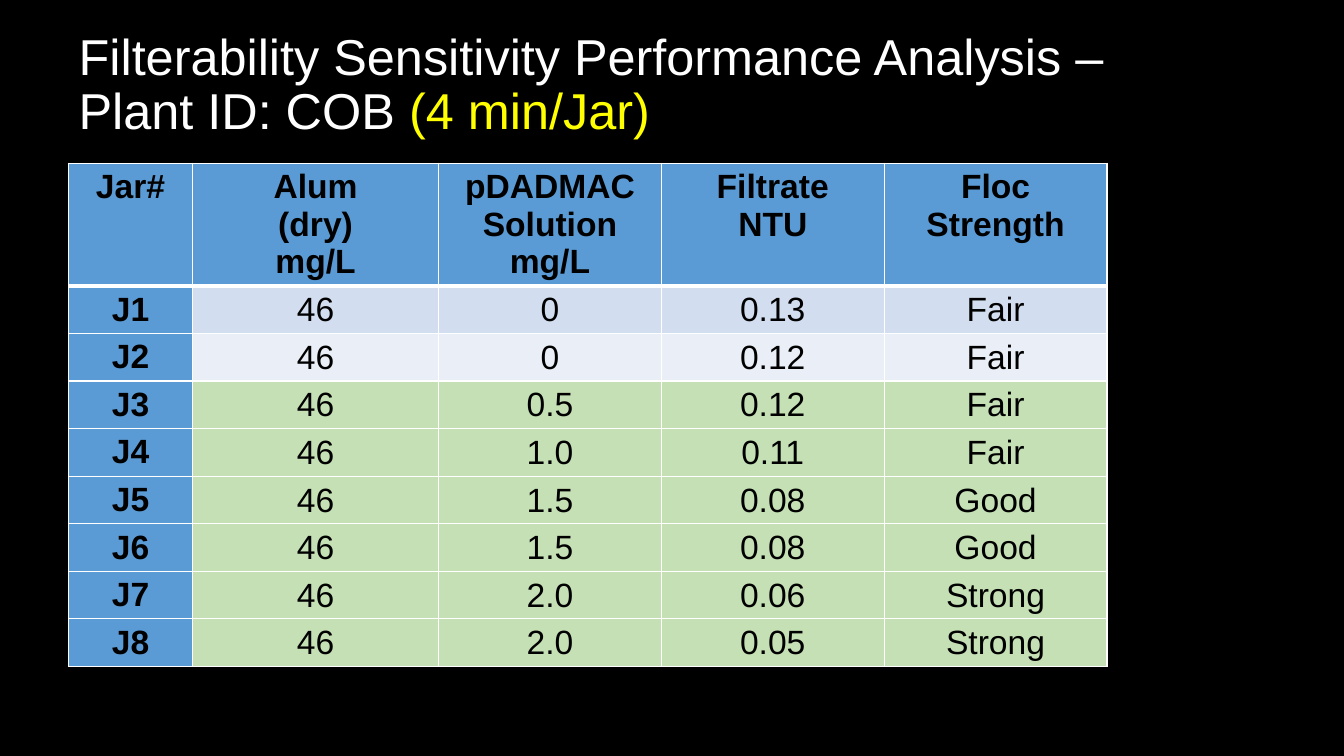
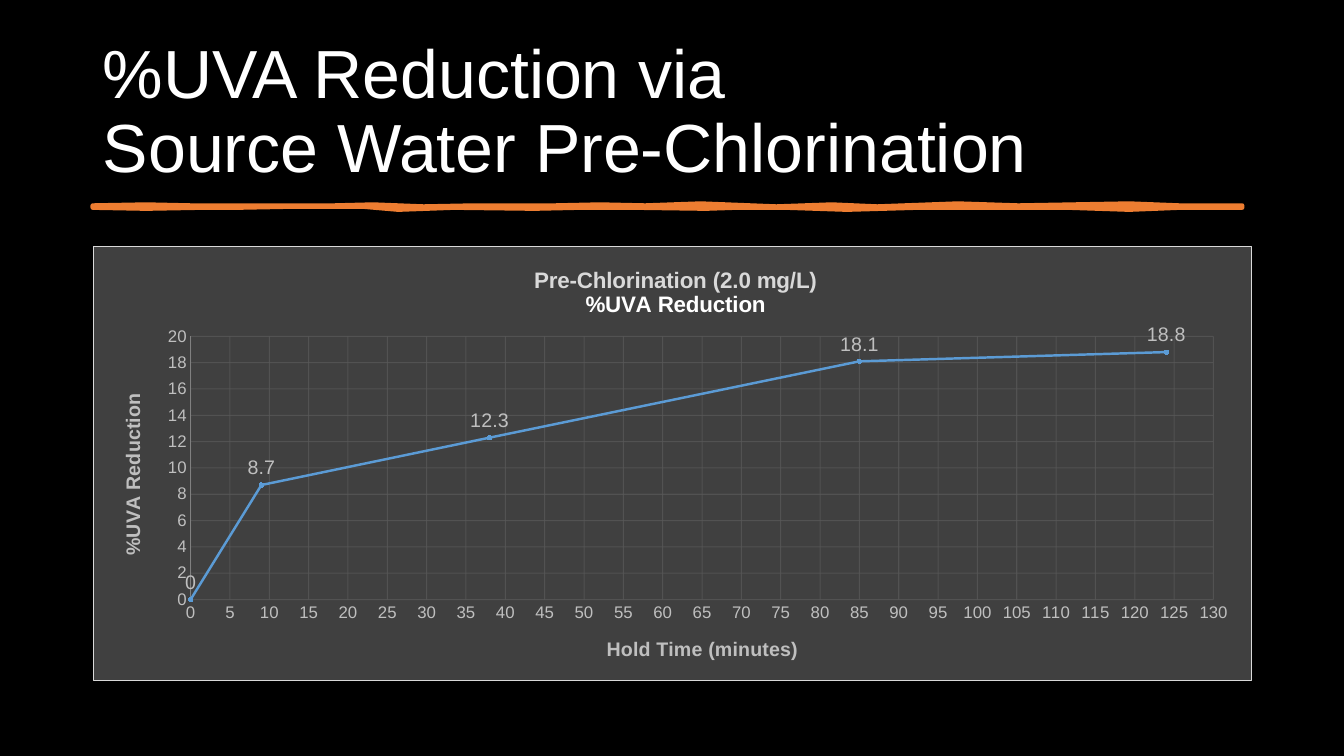
from dataclasses import dataclass

from pptx import Presentation
from pptx.chart.data import XyChartData
from pptx.dml.color import RGBColor
from pptx.enum.chart import XL_CHART_TYPE, XL_LABEL_POSITION, XL_MARKER_STYLE, XL_TICK_MARK
from pptx.enum.text import MSO_ANCHOR, MSO_AUTO_SIZE, PP_ALIGN
from pptx.oxml import parse_xml
from pptx.oxml.ns import nsdecls, qn
from pptx.util import Inches, Pt

# Shared style
FONT = "Arial"
BLACK, WHITE, YELLOW = "000000", "FFFFFF", "FFFF00"
BLUE, ORANGE, GREEN = "5B9BD5", "ED7D31", "C5E0B4"
BAND_DARK, BAND_LIGHT = "D2DEEF", "EAEFF7"
PANEL, GRID, AXIS, LABEL, PALE = "404040", "595959", "808080", "BFBFBF", "D9D9D9"


@dataclass(frozen=True)
class Span:
    text: str
    color: str = WHITE


@dataclass(frozen=True)
class Area:
    left: float
    top: float
    width: float
    height: float

    def lengths(self) -> tuple:
        return tuple(Inches(v) for v in (self.left, self.top, self.width, self.height))


@dataclass(frozen=True)
class Jar:
    name: str
    alum: str
    polymer: str
    turbidity: str
    floc: str
    fill: str = GREEN

    def values(self) -> tuple:
        return self.name, self.alum, self.polymer, self.turbidity, self.floc


HEADERS = ("Jar#", "Alum\n(dry)\nmg/L", "pDADMAC\nSolution\nmg/L",
           "Filtrate\nNTU", "Floc\nStrength")
COLUMN_WIDTHS = (1.23, 2.44, 2.21, 2.21, 2.21)
HEADER_HEIGHT, ROW_HEIGHT = 1.21, 0.47
JARS = (
    Jar("J1", "46", "0", "0.13", "Fair", BAND_DARK),
    Jar("J2", "46", "0", "0.12", "Fair", BAND_LIGHT),
    Jar("J3", "46", "0.5", "0.12", "Fair"),
    Jar("J4", "46", "1.0", "0.11", "Fair"),
    Jar("J5", "46", "1.5", "0.08", "Good"),
    Jar("J6", "46", "1.5", "0.08", "Good"),
    Jar("J7", "46", "2.0", "0.06", "Strong"),
    Jar("J8", "46", "2.0", "0.05", "Strong"),
)
REDUCTION = ((0, 0), (9, 8.7), (38, 12.3), (85, 18.1), (124, 18.8))

# Edges of the brush stroke, left to right
STROKE_TOP = ((0.92, 2.04), (1.45, 2.03), (1.9, 2.04), (2.3, 2.04), (2.8, 2.04),
              (3.31, 2.04), (3.7, 2.03), (4.2, 2.05), (4.7, 2.04), (5.5, 2.04),
              (5.95, 2.03), (6.4, 2.04), (6.95, 2.02), (7.7, 2.05), (8.25, 2.03),
              (8.7, 2.05), (9.5, 2.02), (10.1, 2.04), (11.2, 2.02), (11.7, 2.04),
              (12.32, 2.04))
STROKE_BOTTOM = ((0.92, 2.06), (1.45, 2.07), (2, 2.06), (2.35, 2.06), (2.89, 2.05),
                 (3.6, 2.05), (3.95, 2.08), (4.5, 2.06), (5.3, 2.07), (5.75, 2.06),
                 (6.3, 2.06), (7, 2.07), (7.3, 2.06), (7.8, 2.06), (8.4, 2.08),
                 (9.1, 2.06), (9.8, 2.06), (10.6, 2.06), (11.2, 2.08), (11.7, 2.06),
                 (12.32, 2.06))


def rgb(color: str) -> RGBColor:
    return RGBColor.from_string(color)


def format_font(font, *, size: float, color: str, bold: bool = False) -> None:
    font.name, font.size, font.bold = FONT, Pt(size), bold
    font.color.rgb = rgb(color)


def write_text(paragraph, text: str, *, size: float, color: str, bold: bool = False) -> None:
    """Append text, turning each newline into a line break."""
    for index, line in enumerate(text.split("\n")):
        if index:
            paragraph.add_line_break()
        if line:
            run = paragraph.add_run()
            run.text = line
            format_font(run.font, size=size, color=color, bold=bold)


def write_lines(frame, spans: list, *, size: float, bold: bool) -> None:
    """Write one centred paragraph for each span."""
    for index, span in enumerate(spans):
        paragraph = frame.add_paragraph() if index else frame.paragraphs[0]
        paragraph.alignment = PP_ALIGN.CENTER
        write_text(paragraph, span.text, size=size, color=span.color, bold=bold)


def add_page(deck, area: Area, spans: list, *, size: float):
    page = deck.slides.add_slide(deck.slide_layouts[5])
    title = page.shapes.title
    title.left, title.top, title.width, title.height = area.lengths()
    frame = title.text_frame
    frame.auto_size, frame.word_wrap = MSO_AUTO_SIZE.NONE, True
    frame.vertical_anchor = MSO_ANCHOR.MIDDLE
    paragraph = frame.paragraphs[0]
    paragraph.alignment, paragraph.line_spacing = PP_ALIGN.LEFT, 0.9
    for span in spans:
        write_text(paragraph, span.text, size=size, color=span.color)
    return page


# Table
def set_border(cell, side: str, width: float) -> None:
    cell._tc.get_or_add_tcPr().append(parse_xml(
        f'<a:{side} {nsdecls("a")} w="{Pt(width)}"><a:solidFill>'
        f'<a:srgbClr val="{WHITE}"/></a:solidFill></a:{side}>'))


def fill_cell(cell, text: str, *, fill: str, bold: bool, top: float, bottom: float) -> None:
    for side, width in (("lnL", 1), ("lnR", 1), ("lnT", top), ("lnB", bottom)):
        set_border(cell, side, width)
    cell.fill.solid()
    cell.fill.fore_color.rgb = rgb(fill)
    if not bold:
        cell.vertical_anchor = MSO_ANCHOR.MIDDLE
        cell.margin_left = cell.margin_right = cell.margin_top = Inches(0.01)
        cell.margin_bottom = 0
    write_lines(cell.text_frame, [Span(line, BLACK) for line in text.split("\n")],
                size=24, bold=bold)


def add_jar_table(page) -> None:
    area = Area(0.68, 1.62, sum(COLUMN_WIDTHS), HEADER_HEIGHT + ROW_HEIGHT * len(JARS))
    table = page.shapes.add_table(len(JARS) + 1, len(HEADERS), *area.lengths()).table
    table.horz_banding = False
    for column, width in zip(table.columns, COLUMN_WIDTHS):
        column.width = Inches(width)
    for index, row in enumerate(table.rows):
        row.height = Inches(ROW_HEIGHT if index else HEADER_HEIGHT)
        values = JARS[index - 1].values() if index else HEADERS
        for position, (cell, text) in enumerate(zip(row.cells, values)):
            heading = index == 0 or position == 0
            fill_cell(cell, text, fill=BLUE if heading else JARS[index - 1].fill,
                      bold=heading, top=3 if index == 1 else 1,
                      bottom=3 if index == 0 else 1)


# Brush stroke
def add_stroke(page) -> None:
    outline = [(Inches(x), Inches(y)) for x, y in STROKE_TOP + STROKE_BOTTOM[::-1]]
    builder = page.shapes.build_freeform(*outline[0])
    builder.add_line_segments(outline[1:], close=True)
    stroke = builder.convert_to_shape()
    stroke.shadow.inherit = False
    stroke.fill.solid()
    stroke.fill.fore_color.rgb = rgb(ORANGE)
    stroke.line.color.rgb = rgb(ORANGE)
    stroke.line.width = Pt(3.25)
    stroke.line._ln.append(parse_xml(f'<a:round {nsdecls("a")}/>'))


# Chart
def manual_layout(**values):
    modes = '<c:xMode val="edge"/><c:yMode val="edge"/>'
    target = '<c:layoutTarget val="inner"/>' if "w" in values else ""
    sizes = "".join(f'<c:{name} val="{value}"/>' for name, value in values.items())
    return parse_xml(f'<c:layout {nsdecls("c")}><c:manualLayout>{target}{modes}{sizes}'
                     '</c:manualLayout></c:layout>')


def place(parent, **values) -> None:
    """Set the layout of a title or of the plot area."""
    for old in parent.findall(qn("c:layout")):
        parent.remove(old)
    text = parent.find(qn("c:tx"))
    if text is None:
        parent.insert(0, manual_layout(**values))
    else:
        text.addnext(manual_layout(**values))


def format_line(line, color: str, width: float = 0.75) -> None:
    line.color.rgb = rgb(color)
    line.width = Pt(width)


def format_axis(axis, title: str, *, maximum: float, step: float, x: float, y: float) -> None:
    axis.minimum_scale, axis.maximum_scale, axis.major_unit = 0, maximum, step
    axis.major_tick_mark = axis.minor_tick_mark = XL_TICK_MARK.NONE
    format_font(axis.tick_labels.font, size=12, color=LABEL)
    axis.has_major_gridlines = True
    grid = axis.major_gridlines
    format_line(grid.format.line, GRID)
    tint = grid.format.line._ln.find(".//" + qn("a:srgbClr"))
    tint.append(parse_xml(f'<a:alpha {nsdecls("a")} val="75000"/>'))
    write_lines(axis.axis_title.text_frame, [Span(title, LABEL)], size=14, bold=True)
    place(axis.axis_title._element, x=x, y=y)


def format_panel(chart) -> None:
    node = chart.element.find(qn("c:chart"))
    node.addprevious(parse_xml(f'<c:roundedCorners {nsdecls("c")} val="0"/>'))
    node.addnext(parse_xml(
        f'<c:spPr {nsdecls("c", "a")}><a:solidFill><a:srgbClr val="{PANEL}"/></a:solidFill>'
        f'<a:ln w="{Pt(0.75)}"><a:solidFill><a:srgbClr val="{PALE}"/></a:solidFill></a:ln>'
        '</c:spPr>'))
    place(node.find(qn("c:plotArea")), x=0.084, y=0.207, w=0.883, h=0.606)


def add_reduction_chart(page) -> None:
    data = XyChartData()
    points = data.add_series("Series 1")
    for minutes, percent in REDUCTION:
        points.add_data_point(minutes, percent)
    chart = page.shapes.add_chart(XL_CHART_TYPE.XY_SCATTER_LINES,
                                  *Area(0.92, 2.44, 11.5, 4.32).lengths(), data).chart
    chart.has_legend = False
    format_font(chart.font, size=10, color=WHITE)
    chart.has_title = True
    write_lines(chart.chart_title.text_frame,
                [Span("Pre-Chlorination (2.0 mg/L)", PALE), Span("%UVA Reduction")],
                size=16, bold=True)
    place(chart.chart_title._element, x=0.378, y=0.04)
    format_panel(chart)

    format_axis(chart.category_axis, "Hold Time (minutes)", maximum=130, step=5, x=0.44, y=0.89)
    chart.category_axis.format.line.fill.background()
    format_axis(chart.value_axis, "%UVA Reduction", maximum=20, step=2, x=0.02, y=0.33)
    format_line(chart.value_axis.format.line, AXIS)
    body = chart.value_axis.axis_title._element.find(".//" + qn("a:bodyPr"))
    body.set("rot", "-5400000")
    body.set("vert", "horz")

    plot = chart.plots[0]
    plot.vary_by_categories = False
    series = plot.series[0]
    series.smooth = False
    format_line(series.format.line, BLUE, 1.75)
    series.marker.style, series.marker.size = XL_MARKER_STYLE.CIRCLE, 3
    series.marker.format.fill.solid()
    series.marker.format.fill.fore_color.rgb = rgb(BLUE)
    format_line(series.marker.format.line, BLUE)
    for index in range(len(REDUCTION)):
        label = series.points[index].data_label
        format_font(label.font, size=14, color=LABEL)
        label.position = XL_LABEL_POSITION.ABOVE


def main() -> None:
    deck = Presentation()
    deck.slide_width, deck.slide_height = Inches(13.33), Inches(7.5)
    background = deck.slide_master.background.fill
    background.solid()
    background.fore_color.rgb = rgb(BLACK)

    page = add_page(deck, Area(0.68, 0.13, 10.78, 1.45), [
        Span("Filterability Sensitivity Performance Analysis –\nPlant ID: COB "),
        Span("(4 min/Jar)", YELLOW)], size=36)
    add_jar_table(page)

    page = add_page(deck, Area(0.92, 0.4, 11.5, 1.45), [
        Span("%UVA Reduction via\nSource Water Pre-Chlorination")], size=48.6)
    add_stroke(page)
    add_reduction_chart(page)
    deck.save("out.pptx")


if __name__ == "__main__":
    main()
